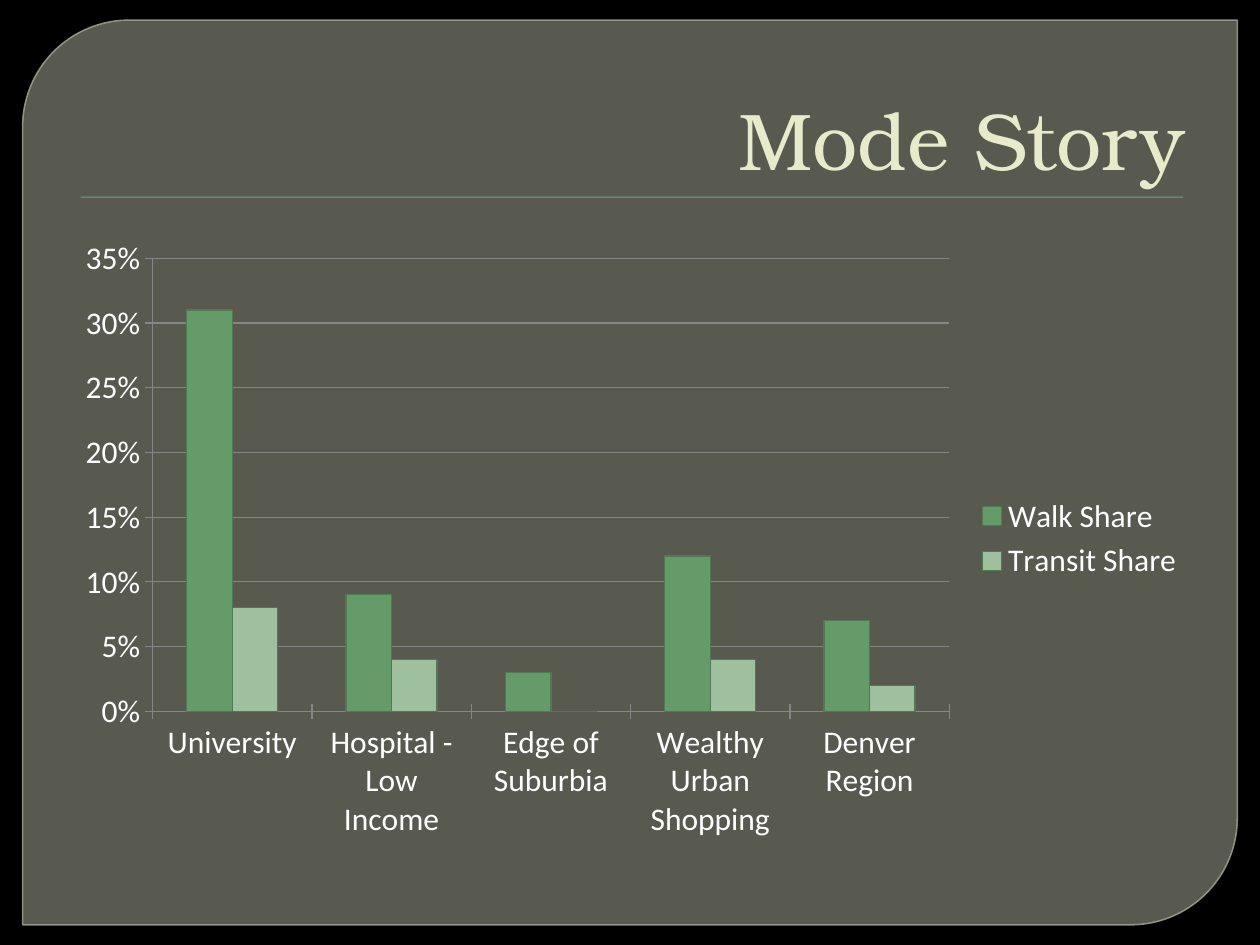
"""Build the Mode Story slide: a clustered column chart on a rounded panel."""
from lxml.etree import SubElement
from pptx import Presentation
from pptx.chart.data import CategoryChartData
from pptx.dml.color import RGBColor
from pptx.enum.chart import XL_CHART_TYPE as ChartType, XL_LEGEND_POSITION as LegendPosition
from pptx.enum.chart import XL_TICK_MARK as TickMark
from pptx.enum.shapes import MSO_SHAPE as Preset
from pptx.enum.text import MSO_ANCHOR as Anchor, PP_ALIGN as Align
from pptx.oxml.ns import qn
from pptx.util import Inches, Pt

COLORS = {
    "background": "000000",
    "panel": "888B7B",
    "panel_line": "9DA090",
    "rule": "72A376",
    "title": "E7EACB",
    "text": "FFFFFF",
    "axis": "868686",
    "bar_line": "4F7A54",
    "walk": "72A376",
    "transit": "B0CCB0",
}
COLUMNS, ROWS, CELL = 100, 75, 0.1


class ModeSlide:
    """Style and current page, placed on a grid of 100 columns by 75 rows."""

    def __init__(self, deck):
        deck.slide_width = Inches(COLUMNS * CELL)
        deck.slide_height = Inches(ROWS * CELL)
        self.page = deck.slides.add_slide(deck.slide_layouts[6])
        self.paint(self.page.background.fill, "background")

    def place(self, *cells):
        return [Inches(cell * CELL) for cell in cells]

    def paint(self, fill, color, alpha=None):
        fill.solid()
        fill.fore_color.rgb = RGBColor.from_string(COLORS[color])
        if alpha:
            value = fill._xPr.find(".//" + qn("a:srgbClr"))
            SubElement(value, qn("a:alpha")).set("val", str(alpha * 1000))

    def outline(self, line, color, width, alpha=None):
        line.width = Pt(width)
        self.paint(line.fill, color, alpha)

    def style(self, font, size, name, color):
        font.size = Pt(size)
        font.name = name
        font.color.rgb = RGBColor.from_string(COLORS[color])

    def shape(self, preset, cells, color, alpha=None):
        shape = self.page.shapes.add_shape(preset, *self.place(*cells))
        shape.shadow.inherit = False
        self.paint(shape.fill, color, alpha)
        shape.line.fill.background()
        return shape

    def panel(self, cells):
        panel = self.shape(Preset.ROUND_2_DIAG_RECTANGLE, cells, "panel", 65)
        panel.adjustments[0] = 0.118
        panel.adjustments[1] = 0
        self.outline(panel.line, "panel_line", 0.87, 88)

    def title(self, text, cells):
        box = self.page.shapes.add_textbox(*self.place(*cells))
        frame = box.text_frame
        frame.word_wrap = True
        frame.vertical_anchor = Anchor.BOTTOM
        para = frame.paragraphs[0]
        para.text = text
        para.alignment = Align.RIGHT
        self.style(para.font, 46, "TeX Gyre Bonum", "title")

    def columns(self, categories, series, cells):
        data = CategoryChartData(number_format="0%")
        data.categories = categories
        for name, values, _ in series:
            data.add_series(name, values)
        chart = self.page.shapes.add_chart(
            ChartType.COLUMN_CLUSTERED, *self.place(*cells), data).chart
        self.style(chart.font, 18, "Calibri", "text")
        chart.has_title = False
        chart.has_legend = True
        chart.legend.position = LegendPosition.RIGHT
        chart.legend.include_in_layout = False

        for axis in (chart.category_axis, chart.value_axis):
            axis.major_tick_mark = TickMark.CROSS
            axis.minor_tick_mark = TickMark.NONE
            self.outline(axis.format.line, "axis", 0.75)
        scale = chart.value_axis
        scale.minimum_scale, scale.maximum_scale, scale.major_unit = 0, 0.35, 0.05
        scale.tick_labels.number_format = "0%"
        scale.tick_labels.number_format_is_linked = False
        self.outline(scale.major_gridlines.format.line, "axis", 0.75)

        plot = chart.plots[0]
        plot.gap_width, plot.overlap = 150, 0
        plot.vary_by_categories = False
        for bars, (_, _, color) in zip(plot.series, series):
            self.paint(bars.format.fill, color)
            bars.format.fill.fore_color.brightness = -0.08
            self.outline(bars.format.line, "bar_line", 0.75)


def main():
    deck = Presentation()
    slide = ModeSlide(deck)
    slide.panel((1.8, 1.6, 96.4, 71.8))
    slide.shape(Preset.RECTANGLE, (6.4, 15.6, 87.5, 0.1), "rule")
    slide.title("Mode Story", (5, 2.8, 90, 12.5))
    slide.columns(
        ["University", "Hospital - Low Income", "Edge of Suburbia",
         "Wealthy Urban Shopping", "Denver Region"],
        [("Walk Share", (0.31, 0.09, 0.03, 0.12, 0.07), "walk"),
         ("Transit Share", (0.08, 0.04, 0, 0.04, 0.02), "transit")],
        (5, 18, 90, 49.5))
    deck.save("out.pptx")


if __name__ == "__main__":
    main()
